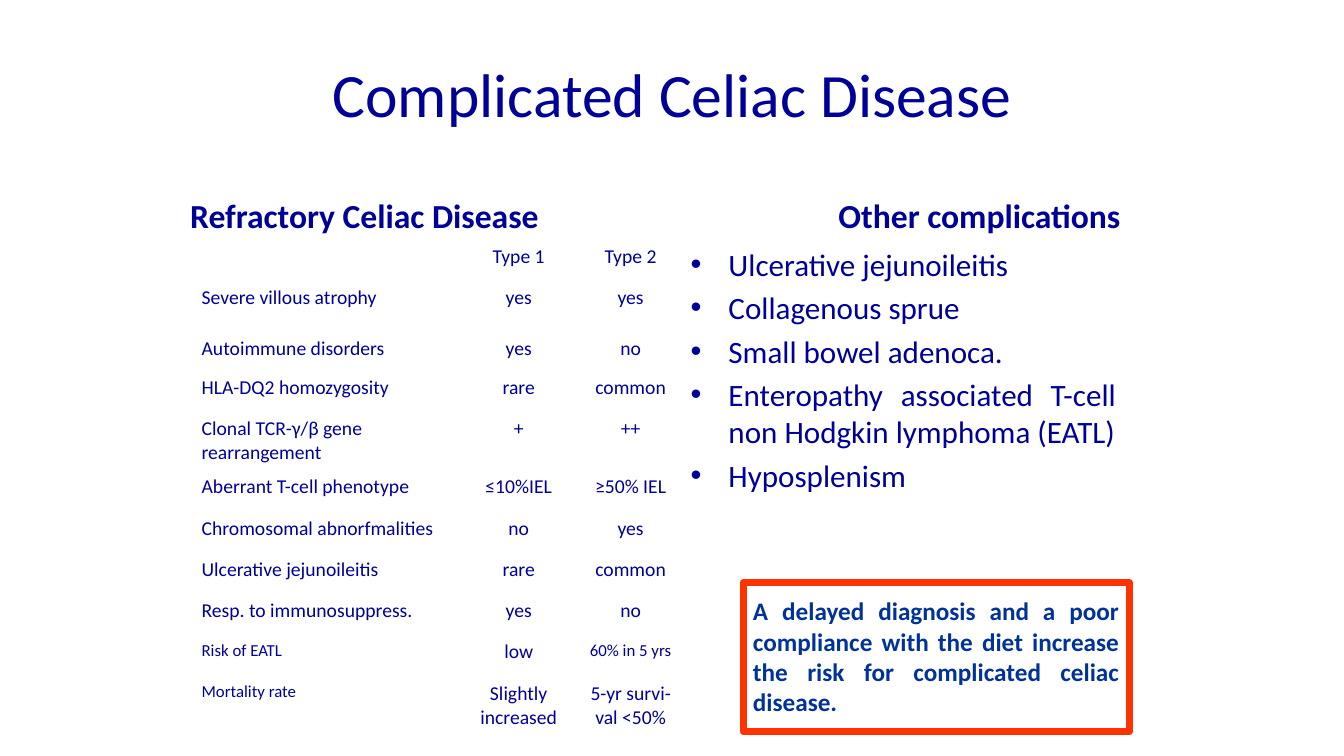
from dataclasses import dataclass

from pptx import Presentation
from pptx.dml.color import RGBColor
from pptx.enum.shapes import MSO_SHAPE
from pptx.enum.text import MSO_ANCHOR, MSO_AUTO_SIZE, PP_ALIGN
from pptx.slide import Slide
from pptx.text.text import TextFrame
from pptx.util import Pt

PX = 9144  # EMU per px, 100 px to the inch


@dataclass(frozen=True)
class Theme:
    font: str = "Calibri"
    ink: RGBColor = RGBColor(0x00, 0x00, 0x99)
    warning_ink: RGBColor = RGBColor(0x00, 0x33, 0x99)
    warning_line: RGBColor = RGBColor(0xFF, 0x33, 0x00)
    paper: RGBColor = RGBColor(0xFF, 0xFF, 0xFF)
    title: float = 44
    heading: float = 24
    listing: float = 22.2
    warning: float = 18
    cell: float = 14
    small_cell: float = 12
    frame: float = 5


@dataclass(frozen=True)
class Box:
    left: int
    top: int
    width: int
    height: int

    def emu(self) -> tuple[int, ...]:
        return tuple(v * PX for v in (self.left, self.top, self.width, self.height))


@dataclass(frozen=True)
class PlaceholderText:
    idx: int
    box: Box
    lines: tuple[str, ...]
    size: float
    align: PP_ALIGN = PP_ALIGN.CENTER
    anchor: MSO_ANCHOR = MSO_ANCHOR.BOTTOM
    bold: bool = False


@dataclass(frozen=True)
class Feature:
    name: str
    type_1: str
    type_2: str
    height: int = 41
    small: tuple[int, ...] = ()  # columns set in the small size


THEME = Theme()

PLACEHOLDERS = (
    PlaceholderText(0, Box(67, 30, 1200, 125), ("Complicated Celiac Disease",),
                    THEME.title, anchor=MSO_ANCHOR.MIDDLE),
    PlaceholderText(1, Box(67, 168, 589, 70), ("Refractory Celiac Disease",),
                    THEME.heading, bold=True),
    PlaceholderText(3, Box(677, 168, 589, 70), ("Other complications",),
                    THEME.heading, bold=True),
    PlaceholderText(4, Box(675, 238, 442, 247), (
        "Ulcerative jejunoileitis",
        "Collagenous sprue",
        "Small bowel adenoca.",
        "Enteropathy associated T-cell non Hodgkin lymphoma (EATL)",
        "Hyposplenism",
    ), THEME.listing, PP_ALIGN.JUSTIFY, MSO_ANCHOR.TOP),
)
UNUSED_PLACEHOLDER = 2

TABLE_BOX = Box(190, 238, 493, 486)
COLUMN_WIDTHS = (271, 107, 115)
FEATURES = (
    Feature("", "Type 1", "Type 2"),
    Feature("Severe villous atrophy", "yes", "yes", height=50),
    Feature("Autoimmune disorders", "yes", "no", height=39),
    Feature("HLA-DQ2 homozygosity", "rare", "common"),
    Feature("Clonal TCR-γ/β gene rearrangement", "+", "++"),
    Feature("Aberrant T-cell phenotype", "≤10%IEL", "≥50% IEL"),
    Feature("Chromosomal abnorfmalities", "no", "yes"),
    Feature("Ulcerative jejunoileitis", "rare", "common"),
    Feature("Resp. to immunosuppress.", "yes", "no"),
    Feature("Risk of EATL", "low", "60% in 5 yrs", small=(0, 2)),
    Feature("Mortality rate", "Slightly increased", "5-yr survi-val <50%", small=(0,)),
)

WARNING = ("A delayed diagnosis and a poor compliance with the diet increase "
           "the risk for complicated celiac disease.")
WARNING_TEXT_BOX = Box(737, 586, 383, 131)
WARNING_FRAME = Box(737, 578, 383, 148)


def format_text(tf: TextFrame, size: float, align: PP_ALIGN,
                color: RGBColor = THEME.ink, bold: bool = False) -> None:
    for p in tf.paragraphs:
        p.alignment = align
        for r in p.runs:
            r.font.name = THEME.font
            r.font.size = Pt(size)
            r.font.bold = bold
            r.font.color.rgb = color


def fill_placeholder(s: Slide, item: PlaceholderText) -> None:
    sp = s.placeholders[item.idx]
    sp.left, sp.top, sp.width, sp.height = item.box.emu()
    tf = sp.text_frame
    tf.text = "\n".join(item.lines)
    tf.auto_size = MSO_AUTO_SIZE.NONE
    tf.vertical_anchor = item.anchor
    tf.paragraphs[0].space_before = Pt(0)
    format_text(tf, item.size, item.align, bold=item.bold)


def add_feature_table(s: Slide) -> None:
    table = s.shapes.add_table(len(FEATURES), len(COLUMN_WIDTHS), *TABLE_BOX.emu()).table
    table.first_row = table.horz_banding = False
    for column, width in zip(table.columns, COLUMN_WIDTHS):
        column.width = width * PX
    for row, feature in zip(table.rows, FEATURES):
        row.height = feature.height * PX
        values = (feature.name, feature.type_1, feature.type_2)
        for i, (cell, value) in enumerate(zip(row.cells, values)):
            cell.fill.solid()
            cell.fill.fore_color.rgb = THEME.paper
            cell.text_frame.text = value
            size = THEME.small_cell if i in feature.small else THEME.cell
            format_text(cell.text_frame, size, PP_ALIGN.CENTER if i else PP_ALIGN.LEFT)


def add_warning(s: Slide) -> None:
    tf = s.shapes.add_textbox(*WARNING_TEXT_BOX.emu()).text_frame
    tf.word_wrap = True
    tf.text = WARNING
    format_text(tf, THEME.warning, PP_ALIGN.JUSTIFY, THEME.warning_ink, bold=True)

    frame = s.shapes.add_shape(MSO_SHAPE.RECTANGLE, *WARNING_FRAME.emu())
    frame.shadow.inherit = False
    frame.fill.background()
    frame.line.color.rgb = THEME.warning_line
    frame.line.width = Pt(THEME.frame)


def main() -> None:
    prs = Presentation()
    prs.slide_width, prs.slide_height = 1333 * PX, 750 * PX
    s = prs.slides.add_slide(prs.slide_layouts.get_by_name("Comparison"))
    for item in PLACEHOLDERS:
        fill_placeholder(s, item)
    unused = s.placeholders[UNUSED_PLACEHOLDER].element
    unused.getparent().remove(unused)
    add_feature_table(s)
    add_warning(s)
    prs.save("out.pptx")


if __name__ == "__main__":
    main()
